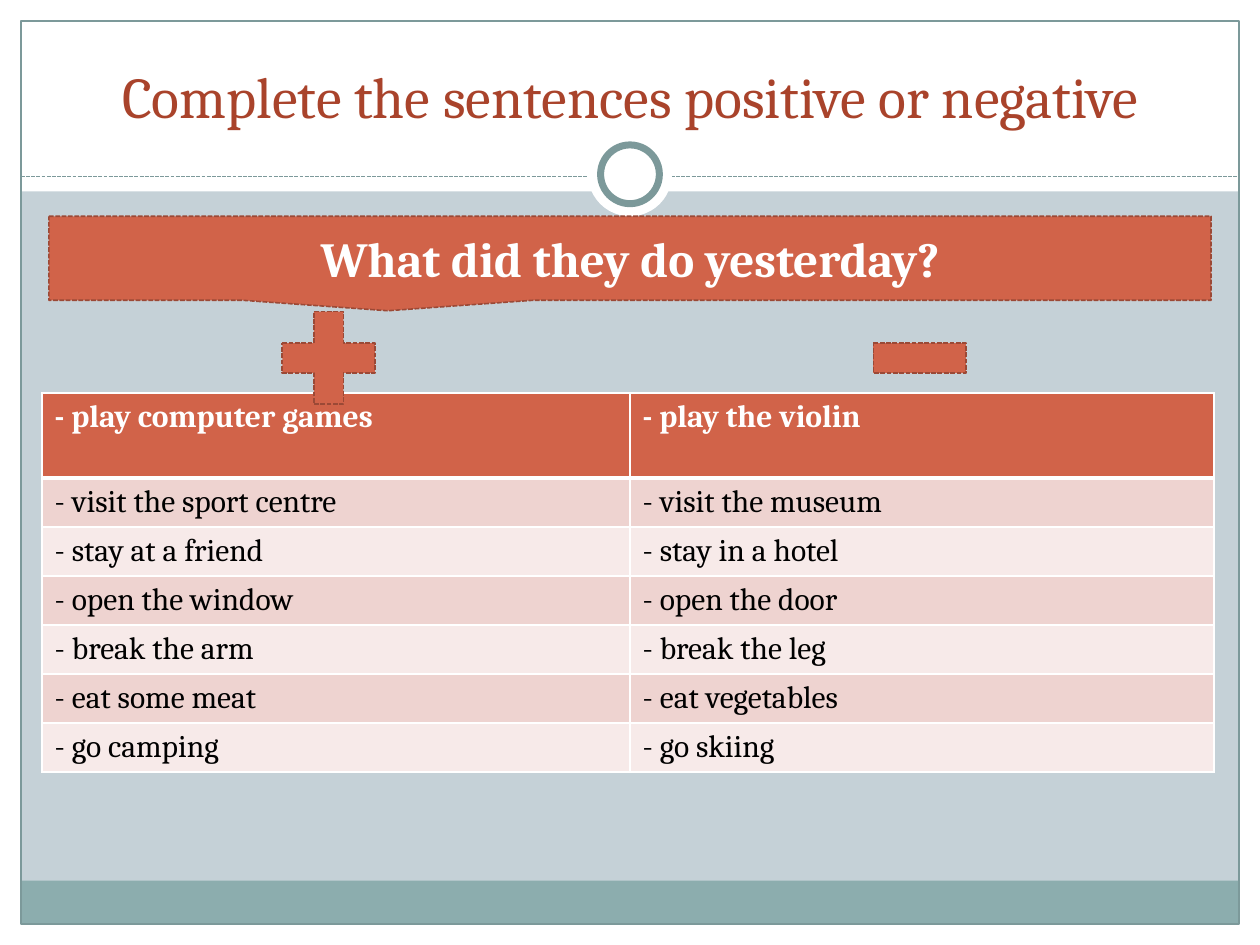
import pptx
import pptx.util
import pptx.dml.color
import pptx.enum.dml
import pptx.enum.shapes
import pptx.enum.text
import pptx.oxml
import pptx.oxml.ns
from dataclasses import dataclass

KIND = pptx.enum.shapes.MSO_SHAPE
ALIGN = pptx.enum.text.PP_ALIGN
ANCHOR = pptx.enum.text.MSO_ANCHOR
DASH = pptx.enum.dml.MSO_LINE.SQUARE_DOT
PT = pptx.util.Pt
COLS, ROWS = 60, 45  # grid of the slide, square cells


@dataclass
class Theme:
    font: str = "Cambria"
    back: str = "C5D1D7"
    white: str = "FFFFFF"
    black: str = "000000"
    teal: str = "8CADAE"
    edge: str = "7C999A"
    rust: str = "D16349"
    dark: str = "9B4936"
    head: str = "A9432B"
    odd: str = "EED3D0"
    even: str = "F7EAE9"
    title: int = 33
    ask: int = 28
    cell: int = 18


def color(code):
    return pptx.dml.color.RGBColor.from_string(code)


class Deck:
    def __init__(self, theme):
        self.theme = theme
        self.show = pptx.Presentation()
        self.show.slide_width = pptx.util.Inches(10)
        self.show.slide_height = pptx.util.Inches(7.5)
        self.unit = self.show.slide_width / COLS
        self.slide = self.show.slides.add_slide(self.show.slide_layouts[5])
        fill = self.slide.background.fill
        fill.solid()
        fill.fore_color.rgb = color(theme.back)

    def grid(self, *cells):
        return [round(cell * self.unit) for cell in cells]

    def stroke(self, line, code, width, dash=None):
        line.color.rgb = color(code)
        line.width = PT(width)
        if dash:
            line.dash_style = dash

    def label(self, frame, text, size, code, bold=False, align=ALIGN.CENTER):
        frame.text = text
        frame.word_wrap = True
        para = frame.paragraphs[0]
        para.alignment = align
        font = para.font
        font.name, font.size, font.bold = self.theme.font, PT(size), bold
        font.color.rgb = color(code)

    def shape(self, kind, box, fill=None, line=None, width=0.75, dash=None):
        item = self.slide.shapes.add_shape(kind, *self.grid(*box))
        item.shadow.inherit = False
        if fill:
            item.fill.solid()
            item.fill.fore_color.rgb = color(fill)
        else:
            item.fill.background()
        if line:
            self.stroke(item.line, line, width, dash)
        else:
            item.line.fill.background()
        return item

    def sign(self, kind, box):
        return self.shape(kind, box, self.theme.rust, self.theme.dark, 0.9, DASH)

    def rule(self, start, end):
        line = self.slide.shapes.add_connector(
            pptx.enum.shapes.MSO_CONNECTOR.STRAIGHT, *self.grid(*start, *end))
        self.stroke(line.line, self.theme.edge, 0.75, DASH)
        props = line._element.spPr
        props.append(pptx.oxml.parse_xml(
            f'<a:effectLst {pptx.oxml.ns.nsdecls("a")}/>'))

    def title(self, text, box):
        item = self.slide.shapes.title
        item.left, item.top, item.width, item.height = self.grid(*box)
        self.label(item.text_frame, text, self.theme.title, self.theme.head)
        item.text_frame.vertical_anchor = ANCHOR.BOTTOM
        self.slide.shapes._spTree.append(item._element)  # above the frame

    def border(self, cell, side, width):
        props = cell._tc.get_or_add_tcPr()
        props.append(pptx.oxml.parse_xml(
            f'<a:ln{side} {pptx.oxml.ns.nsdecls("a")} w="{PT(width)}">'
            f'<a:solidFill><a:srgbClr val="{self.theme.white}"/></a:solidFill>'
            f'</a:ln{side}>'))

    def table(self, rows, spot, wide, high):
        look = self.theme
        box = self.grid(*spot, sum(wide), sum(high))
        grid = self.slide.shapes.add_table(len(rows), len(wide), *box).table
        for col, size in zip(grid.columns, self.grid(*wide)):
            col.width = size
        for row, size in zip(grid.rows, self.grid(*high)):
            row.height = size
        for r, row in enumerate(rows):
            top = r == 0
            fill = look.rust if top else look.odd if r % 2 else look.even
            for c, text in enumerate(row):
                cell = grid.cell(r, c)
                self.label(cell.text_frame, "- " + text, look.cell,
                           look.white if top else look.black, top, ALIGN.LEFT)
                for side in "LRTB":
                    thick = (top and side == "B") or (r == 1 and side == "T")
                    self.border(cell, side, 3 if thick else 1)
                cell.fill.solid()
                cell.fill.fore_color.rgb = color(fill)


def main():
    look = Theme()
    deck = Deck(look)

    # White margins and top band
    for box in ((0, 44, COLS, 1), (0, 0, COLS, 9.12),
                (0, 0, 1, ROWS), (59, 0, 1, ROWS)):
        deck.shape(KIND.RECTANGLE, box, look.white)

    # Footer band, outline, dashed rule and ring
    deck.shape(KIND.RECTANGLE, (1, 41.94, 58, 2.06), look.teal)
    deck.shape(KIND.RECTANGLE, (1, 1, 58, 43), line=look.edge)
    deck.rule((1, 8.4), (59, 8.4))
    deck.shape(KIND.OVAL, (28, 6.3, 4, 4), look.white)
    deck.shape(KIND.OVAL, (28.6, 6.9, 2.8, 2.8), look.white, look.edge, 4)

    deck.title("Complete the sentences positive or negative", (2, 1.5, 56, 5))

    # Prompts for the two columns
    deck.table([
        ("play computer games", "play the violin"),
        ("visit the sport centre", "visit the museum"),
        ("stay at a friend", "stay in a hotel"),
        ("open the window", "open the door"),
        ("break the arm", "break the leg"),
        ("eat some meat", "eat vegetables"),
        ("go camping", "go skiing"),
    ], (2, 18.72), (28, 27.8), [4.04] + [2.33] * 6)

    # Question, plus and minus
    ask = deck.sign(KIND.RECTANGULAR_CALLOUT, (2.33, 10.3, 55.34, 4))
    deck.label(ask.text_frame, "What did they do yesterday?",
               look.ask, look.white, True)
    ask.text_frame.vertical_anchor = ANCHOR.MIDDLE
    for kind, left in ((KIND.MATH_PLUS, 12.65), (KIND.MATH_MINUS, 40.8)):
        deck.sign(kind, (left, 14.05, 6, 6))

    deck.show.save("out.pptx")


if __name__ == "__main__":
    main()
